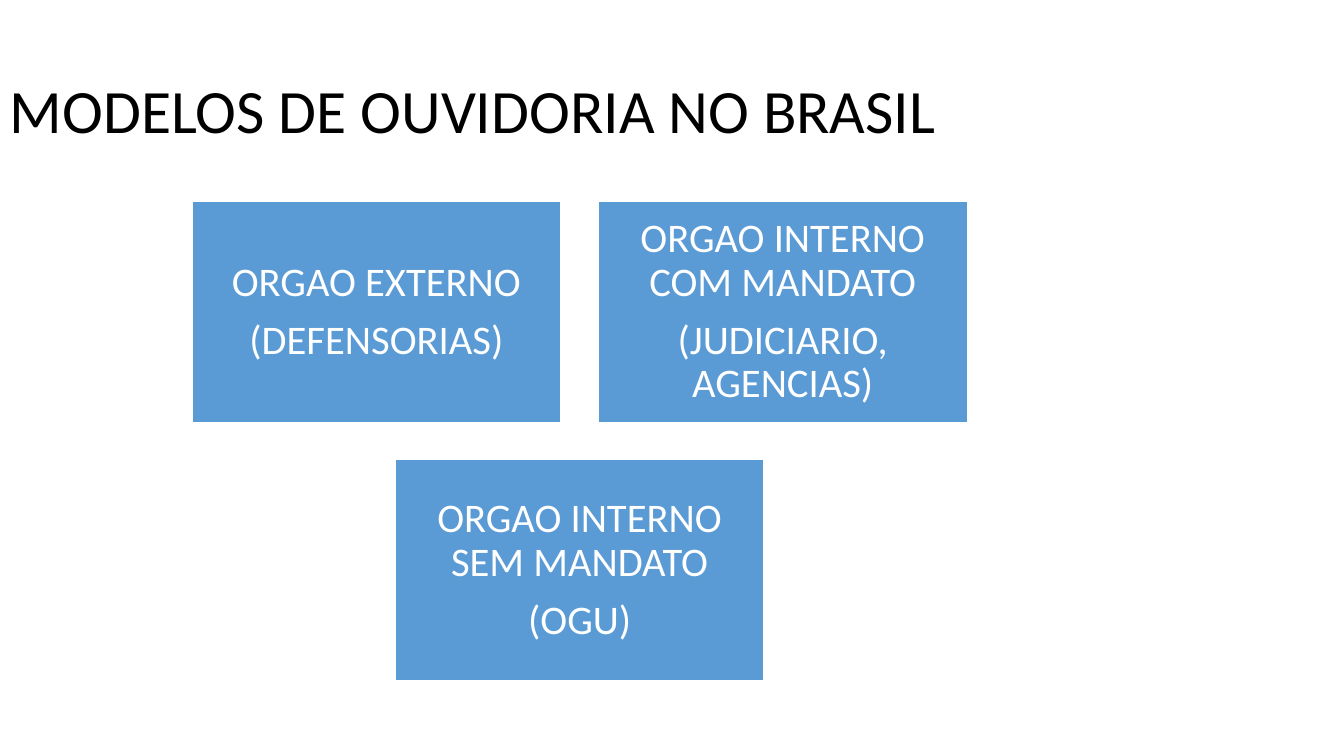
from dataclasses import dataclass
from pptx import Presentation
from pptx.dml.color import RGBColor
from pptx.enum.shapes import MSO_SHAPE
from pptx.enum.text import MSO_ANCHOR, PP_ALIGN
from pptx.util import Inches, Pt


@dataclass(frozen=True)
class Theme:
    font: str = "Calibri"
    ink: RGBColor = RGBColor(0, 0, 0)
    paper: RGBColor = RGBColor(255, 255, 255)
    blue: RGBColor = RGBColor(0x5B, 0x9B, 0xD5)
    head: Pt = Pt(44)
    body: Pt = Pt(29)
    gap: Pt = Pt(10)
    edge: Pt = Pt(1)


def assign(target, values):
    for name, value in values.items():
        setattr(target, name, value)


class Page:
    def __init__(self, slide, theme):
        self.slide = slide
        self.theme = theme

    def label(self, frame, lines, size, color, align, inset):
        assign(frame, {"word_wrap": True, "vertical_anchor": MSO_ANCHOR.MIDDLE,
                       "margin_left": inset, "margin_right": inset})
        for i, line in enumerate(lines):
            para = frame.paragraphs[0] if i == 0 else frame.add_paragraph()
            para.text = line
            assign(para, {"alignment": align, "line_spacing": 0.9})
            if i < len(lines) - 1:
                para.space_after = self.theme.gap
            assign(para.font, {"name": self.theme.font, "size": size})
            para.font.color.rgb = color

    def title(self, text, *area):
        box = self.slide.shapes.add_textbox(*map(Inches, area))
        self.label(box.text_frame, [text], self.theme.head, self.theme.ink,
                   PP_ALIGN.LEFT, Inches(0.1))

    def card(self, lines, *area):
        look = self.theme
        box = self.slide.shapes.add_shape(MSO_SHAPE.RECTANGLE, *map(Inches, area))
        box.shadow.inherit = False
        box.fill.solid()
        box.fill.fore_color.rgb = look.blue
        box.line.color.rgb = look.paper
        box.line.width = look.edge
        self.label(box.text_frame, lines, look.body, look.paper,
                   PP_ALIGN.CENTER, Inches(0.12))


def main():
    deck = Presentation()
    assign(deck, {"slide_width": Inches(13.33), "slide_height": Inches(7.5)})
    page = Page(deck.slides.add_slide(deck.slide_layouts[6]), Theme())

    # Heading
    page.title("MODELOS DE OUVIDORIA NO BRASIL", 0, 0.4, 11.5, 1.45)

    # Cards: each row is centred on the same axis
    rows = [
        [["ORGAO EXTERNO", "(DEFENSORIAS)"],
         ["ORGAO INTERNO COM MANDATO", "(JUDICIARIO, AGENCIAS)"]],
        [["ORGAO INTERNO SEM MANDATO", "(OGU)"]],
    ]
    wide, high, gap, axis, top = 3.66, 2.19, 0.37, 5.75, 2
    for r, row in enumerate(rows):
        left = axis - (len(row) * (wide + gap) - gap) / 2
        for c, lines in enumerate(row):
            page.card(lines, left + c * (wide + gap), top + r * (high + gap),
                      wide, high)

    deck.save("out.pptx")


if __name__ == "__main__":
    main()
